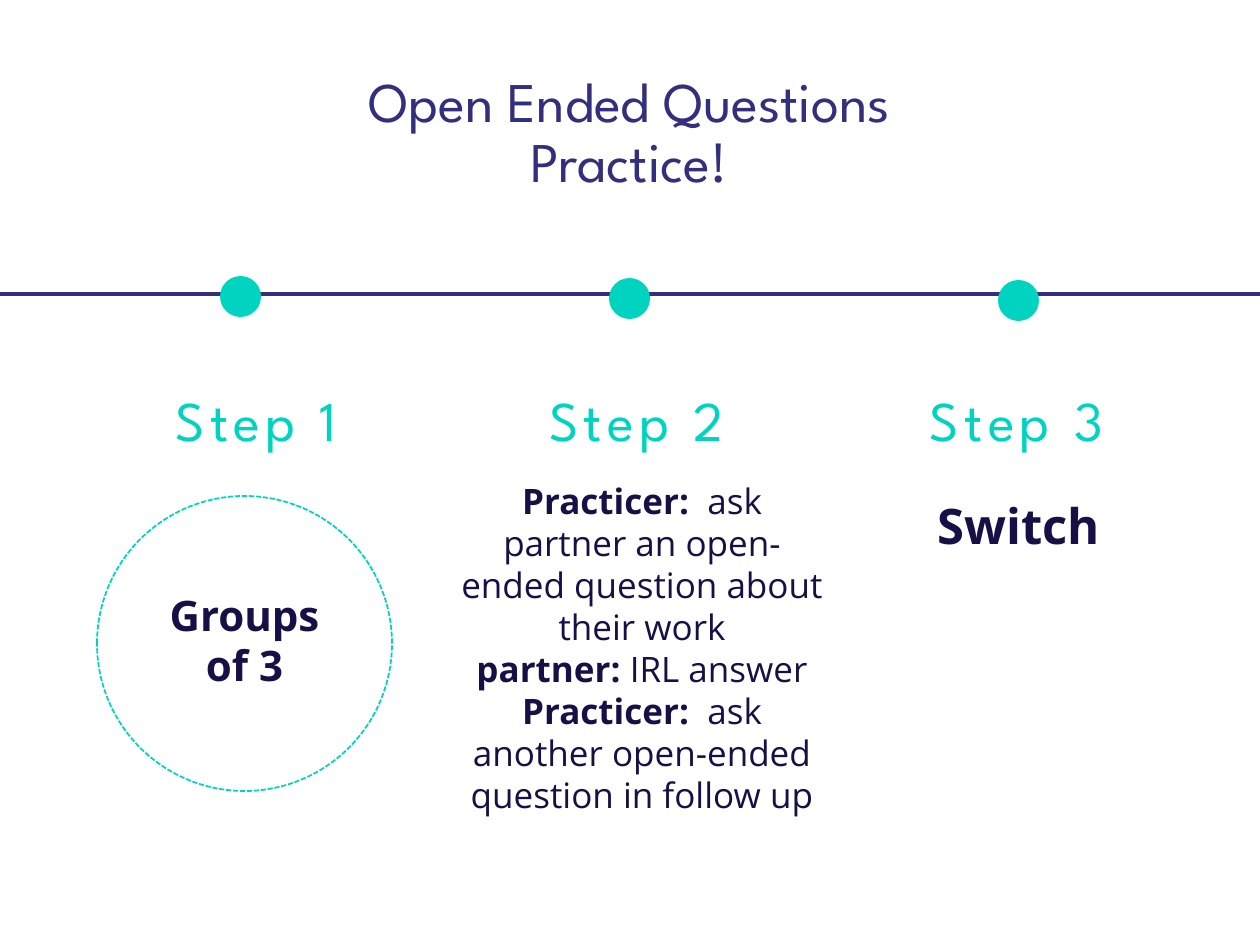
"""Build the three-step open ended questions practice slide."""
from pptx import Presentation
from pptx.dml.color import RGBColor
from pptx.enum.dml import MSO_LINE
from pptx.enum.shapes import MSO_CONNECTOR, MSO_SHAPE
from pptx.enum.text import MSO_ANCHOR, MSO_AUTO_SIZE, PP_ALIGN
from pptx.oxml.ns import qn
from pptx.util import Emu, Pt
from lxml.etree import SubElement

PX = 914400 / 126
COLORS = {"indigo": "322F7C", "teal": "00D3C0", "navy": "171046"}


def px(*lengths):
    return [Emu(round(length * PX)) for length in lengths]


def add_text(shapes, place, paragraphs, size, font, color, spacing=0):
    box = shapes.add_textbox(*px(*place))
    frame = box.text_frame
    frame.word_wrap = True
    frame.auto_size = MSO_AUTO_SIZE.SHAPE_TO_FIT_TEXT
    for index, runs in enumerate(paragraphs):
        para = frame.add_paragraph() if index else frame.paragraphs[0]
        para.alignment = PP_ALIGN.CENTER
        for text, bold in runs:
            span = para.add_run()
            span.text = text
            span.font.name = font
            span.font.size = Pt(size)
            span.font.bold = bold
            span.font.color.rgb = RGBColor.from_string(COLORS[color])
            if spacing:
                span.font._element.set("spc", str(spacing * 100))
    return box


deck = Presentation()
deck.slide_width, deck.slide_height = px(1260, 945)
page = deck.slides.add_slide(deck.slide_layouts[6])
teal = RGBColor.from_string(COLORS["teal"])

timeline = page.shapes.add_connector(MSO_CONNECTOR.STRAIGHT, *px(0, 294, 1260, 294))
timeline.line.color.rgb = RGBColor.from_string(COLORS["indigo"])
timeline.line.width = Pt(2.25)
SubElement(timeline._element.spPr, qn("a:effectLst"))

title = add_text(page.shapes, (300, 60, 659, 149),
                 [[("Open Ended Questions Practice!", False)]],
                 32, "League Spartan", "indigo")
title.text_frame.auto_size = MSO_AUTO_SIZE.NONE
title.text_frame.vertical_anchor = MSO_ANCHOR.MIDDLE
title.text_frame.paragraphs[0].line_spacing = 0.9

group = page.shapes.add_group_shape()
circle = group.shapes.add_shape(MSO_SHAPE.OVAL, *px(97, 496, 295, 295))
circle.shadow.inherit = False
circle.fill.background()
circle.line.color.rgb = teal
circle.line.width = Pt(1)
circle.line.dash_style = MSO_LINE.SQUARE_DOT
add_text(group.shapes, (147, 583, 195, 115), [[("Groups of 3", True)]],
         24, "Open Sans", "navy")

instructions = [
    [("Practicer:  ", True), ("ask partner an open-ended question about their work", False)],
    [("partner: ", True), ("IRL answer", False)],
    [("Practicer:  ", True), ("ask another open-ended question in follow up", False)],
]
add_text(page.shapes, (445, 473, 394, 352), instructions, 20, "Open Sans", "navy")
add_text(page.shapes, (903, 489, 231, 72), [[("Switch", True)]], 28, "Open Sans", "navy")

for index in range(3):
    add_text(page.shapes, (84 + 380 * index, 379, 345, 81),
             [[(f"Step {index + 1}", False)]], 32, "League Spartan", "teal", spacing=3)
    dot = page.shapes.add_shape(MSO_SHAPE.OVAL, *px(220 + 389 * index, 276 + 2 * index, 41, 41))
    dot.shadow.inherit = False
    dot.fill.solid()
    dot.fill.fore_color.rgb = teal
    dot.line.fill.background()

deck.save("out.pptx")
